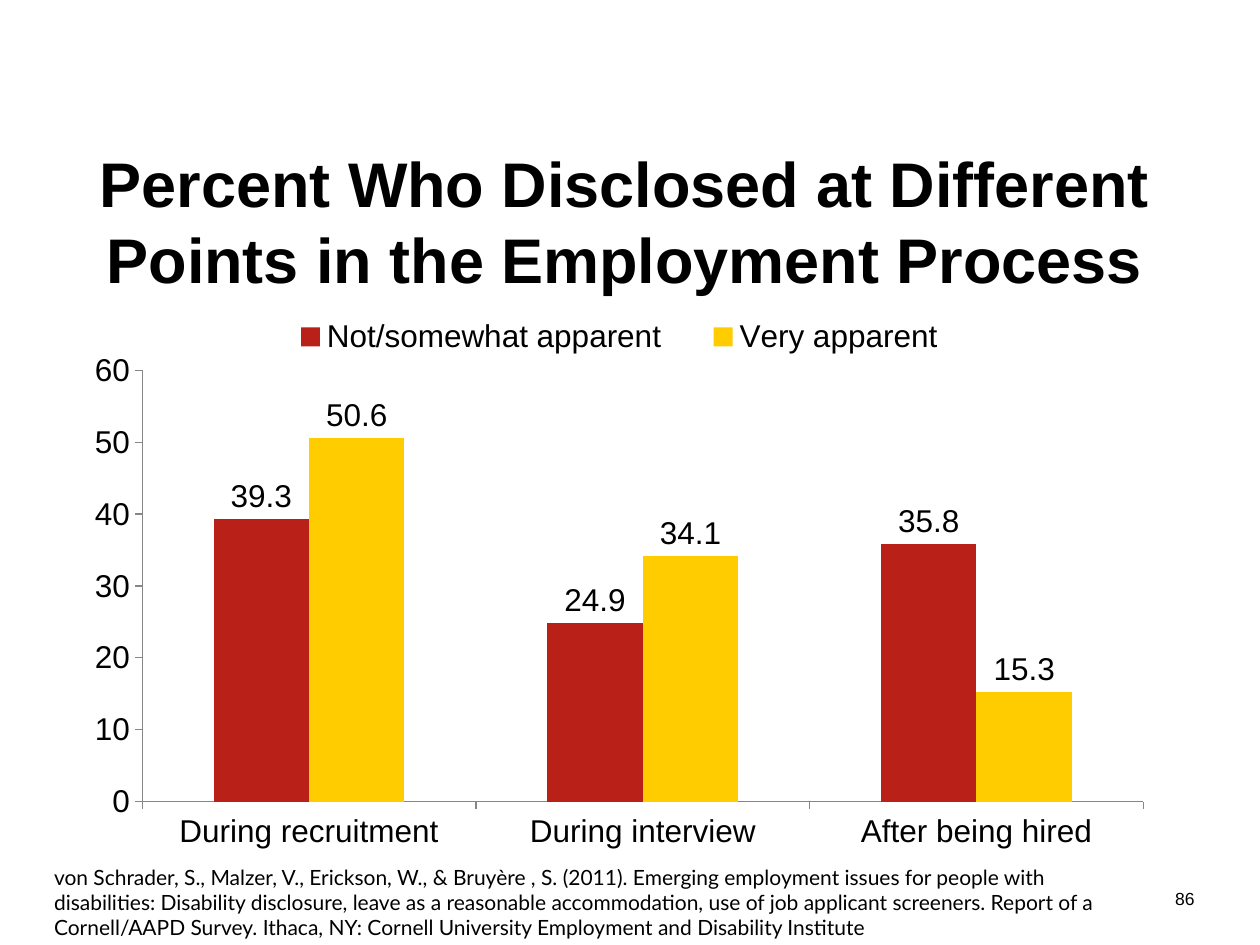
from lxml.etree import SubElement
from pptx import Presentation
from pptx.chart.data import CategoryChartData
from pptx.dml.color import RGBColor
from pptx.enum.chart import (XL_CHART_TYPE as ChartType, XL_LABEL_POSITION as LabelPosition,
                             XL_LEGEND_POSITION as LegendPosition, XL_TICK_MARK as TickMark)
from pptx.enum.text import MSO_ANCHOR as Anchor, PP_ALIGN as Align
from pptx.oxml import parse_xml
from pptx.oxml.ns import nsdecls, qn
from pptx.util import Cm, Pt

BLACK = RGBColor(0x00, 0x00, 0x00)
GRAY = RGBColor(0x86, 0x86, 0x86)
RED = RGBColor(0xB8, 0x20, 0x18)
YELLOW = RGBColor(0xFF, 0xCC, 0x00)

TITLE = "Percent Who Disclosed at Different Points in the Employment Process"
PAGE_NUMBER = "86"
CITATION = (
    "von Schrader, S., Malzer, V., Erickson, W., & Bruyère , S. (2011). "
    "Emerging employment issues for people with disabilities: Disability disclosure, "
    "leave as a reasonable accommodation, use of job applicant screeners. "
    "Report of a Cornell/AAPD Survey. Ithaca, NY: "
    "Cornell University Employment and Disability Institute"
)
STAGES = ["During recruitment", "During interview", "After being hired"]
DISCLOSURE = [
    ("Not/somewhat apparent", (39.3, 24.9, 35.8), RED),
    ("Very apparent", (50.6, 34.1, 15.3), YELLOW),
]
TEXTS = [
    (TITLE, (1.48, 2.75, 22.23, 3.38), 36, "Arial", True, Align.CENTER, Anchor.MIDDLE),
    (PAGE_NUMBER, (19.05, 17.78, 5.28, 1.27), 10, "Arial", False, Align.RIGHT, Anchor.TOP),
    (CITATION, (0.84, 17.3, 22.4, 1.8), 12, "Lato", False, Align.LEFT, Anchor.TOP),
]
CHART_BOX = (1.48, 5.72, 22.01, 11.64)
PLOT_PERCENT = (6.3, 15, 91.7, 74.7)
LEGEND_PERCENT = (17, 5.2, 66, 8)


def add_text(slide, wording, box, size, font_name, bold, align, anchor):
    frame = slide.shapes.add_textbox(*map(Cm, box)).text_frame
    frame.word_wrap = True
    frame.vertical_anchor = anchor
    paragraph = frame.paragraphs[0]
    paragraph.alignment = align
    run = paragraph.add_run()
    run.text = wording
    font = run.font
    font.size, font.name, font.bold = Pt(size), font_name, bold
    font.color.rgb = BLACK


def set_layout(parent, index, percents, inner=False):
    for old in parent.findall(qn("c:layout")):
        parent.remove(old)
    layout = parse_xml(f"<c:layout {nsdecls('c')}><c:manualLayout/></c:layout>")
    settings = [("layoutTarget", "inner")] if inner else []
    settings += [("xMode", "edge"), ("yMode", "edge")]
    settings += [(name, percent / 100) for name, percent in zip("xywh", percents)]
    for name, value in settings:
        SubElement(layout[0], qn(f"c:{name}")).set("val", str(value))
    parent.insert(index, layout)


def add_disclosure_chart(slide):
    data = CategoryChartData()
    data.categories = STAGES
    for name, percents, _ in DISCLOSURE:
        data.add_series(name, percents)
    chart = slide.shapes.add_chart(ChartType.COLUMN_CLUSTERED, *map(Cm, CHART_BOX), data).chart
    chart.has_title = False
    chart.font.size, chart.font.name = Pt(18), "Arial"
    chart.font.color.rgb = BLACK

    chart.has_legend = True
    chart.legend.position = LegendPosition.TOP
    chart.legend.include_in_layout = False
    set_layout(chart.legend._element, 1, LEGEND_PERCENT)
    plot_area = chart._chartSpace.chart.plotArea
    set_layout(plot_area, 0, PLOT_PERCENT, inner=True)

    for axis in (chart.category_axis, chart.value_axis):
        axis.has_major_gridlines = False
        axis.major_tick_mark = TickMark.OUTSIDE
        axis.minor_tick_mark = TickMark.NONE
        axis.format.line.color.rgb = GRAY
        axis.format.line.width = Pt(0.75)
    chart.value_axis.minimum_scale = 0
    chart.value_axis.maximum_scale = 60
    chart.value_axis.major_unit = 10

    plot = chart.plots[0]
    plot.gap_width, plot.overlap = 150, 0
    plot.vary_by_categories = False
    for series, (_, _, color) in zip(plot.series, DISCLOSURE):
        series.format.fill.solid()
        series.format.fill.fore_color.rgb = color
        series.data_labels.show_value = True
        series.data_labels.position = LabelPosition.OUTSIDE_END


def main():
    deck = Presentation()
    deck.slide_width, deck.slide_height = Cm(25.4), Cm(19.05)
    slide = deck.slides.add_slide(deck.slide_layouts[6])
    add_disclosure_chart(slide)
    for text in TEXTS:
        add_text(slide, *text)
    deck.save("out.pptx")


if __name__ == "__main__":
    main()
